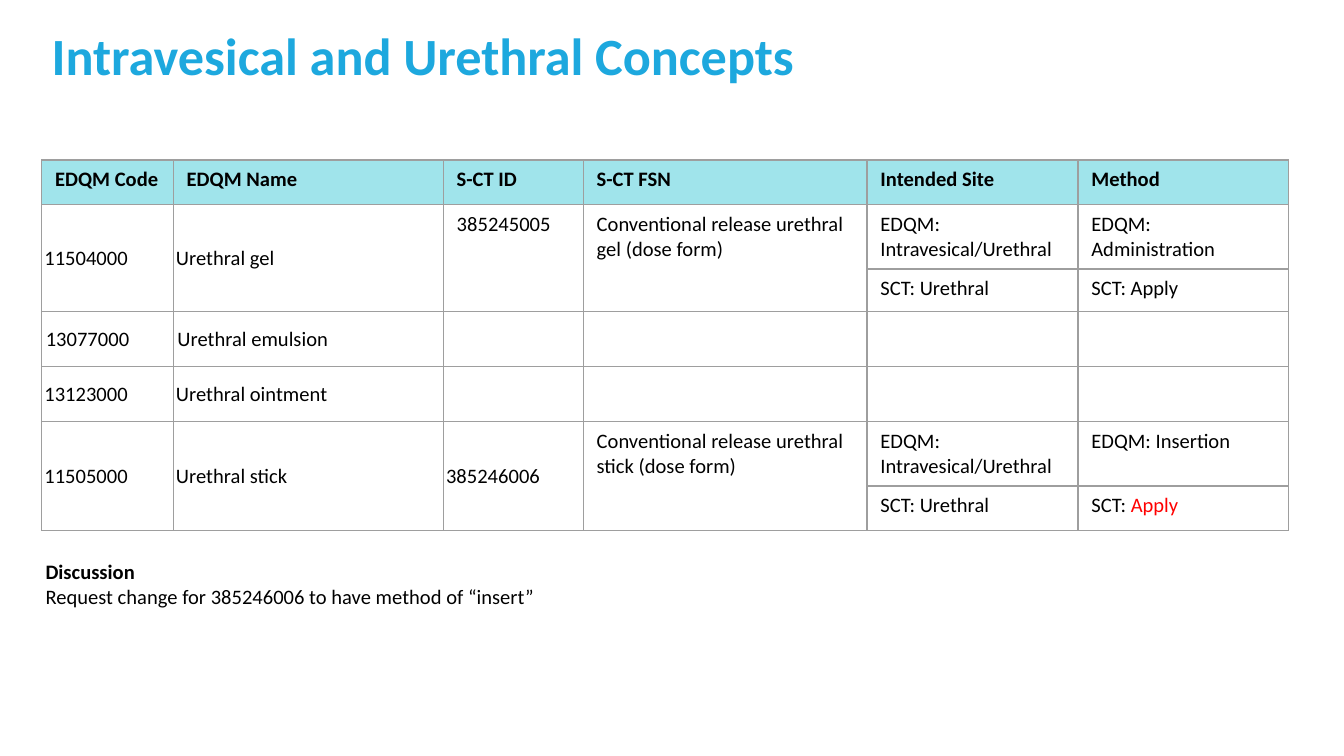
from lxml import etree
from pptx import Presentation
from pptx.dml.color import RGBColor
from pptx.enum.text import MSO_ANCHOR, MSO_AUTO_SIZE, PP_ALIGN
from pptx.oxml.ns import qn
from pptx.util import Pt

MIDDLE = MSO_ANCHOR.MIDDLE
LEFT = PP_ALIGN.LEFT
GROW = MSO_AUTO_SIZE.SHAPE_TO_FIT_TEXT
TITLE_ONLY = 5

BLACK, RED, BLUE = "000000", "FF0000", "1DA8DE"
AQUA, GRAY = "A0E4EB", "9E9E9E"

COLS = [70.5, 144.7, 75, 152, 113, 113]
ROWS = [24, 26, 23, 29.5, 29.5, 24, 24]
HEADS = ["EDQM Code", "EDQM Name", "S-CT ID", "S-CT FSN",
         "Intended Site", "Method"]
BODY = [
    ["11504000", "Urethral gel", "385245005",
     "Conventional release urethral gel (dose form)",
     "EDQM: Intravesical/Urethral", "EDQM: Administration"],
    ["", "", "", "", "SCT: Urethral", "SCT: Apply"],
    ["13077000", "Urethral emulsion", "", "", "", ""],
    ["13123000", "Urethral ointment", "", "", "", ""],
    ["11505000", "Urethral stick", "385246006",
     "Conventional release urethral stick (dose form)",
     "EDQM: Intravesical/Urethral", "EDQM: Insertion"],
    ["", "", "", "", "SCT: Urethral", "SCT: "],
]
PAIRS = [1, 5]  # first row of each product that spans two rows
TIGHT = {(row, col): (1.5, 0.75) for row in (1, 4, 5) for col in (0, 1)}
TIGHT.update({(3, 0): (2.25, 1.5), (3, 1): (2.25, 1.5), (5, 2): (1.5, 0.75)})


def rgb(code):
    return RGBColor.from_string(code)


def add_text(para, text, size=11, color=BLACK, bold=False):
    run = para.add_run()
    run.text = text
    font = run.font
    font.name, font.size, font.bold = "Calibri", Pt(size), bold
    font.color.rgb = rgb(color)


def set_edges(cell):
    """Draw a thin line on all four sides, ahead of the fill in the XML."""
    props = cell._tc.get_or_add_tcPr()
    for i, side in enumerate(("lnL", "lnR", "lnT", "lnB")):
        line = etree.Element(qn("a:" + side), w=str(Pt(0.75)))
        fill = etree.SubElement(line, qn("a:solidFill"))
        etree.SubElement(fill, qn("a:srgbClr"), val=GRAY)
        props.insert(i, line)


def set_inset(cell, side, top):
    cell.vertical_anchor = MIDDLE
    cell.margin_left = cell.margin_right = Pt(side)
    cell.margin_top = cell.margin_bottom = Pt(top)


def add_title(slide, text):
    title = slide.shapes.title
    title.left, title.top = Pt(22.3), Pt(-8)
    title.width, title.height = Pt(620.6), Pt(78.5)
    frame = title.text_frame
    frame.word_wrap = True
    frame.vertical_anchor = MIDDLE
    frame.margin_left = frame.margin_right = Pt(5.4)
    frame.margin_top = frame.margin_bottom = Pt(2.7)
    para = frame.paragraphs[0]
    para.alignment = LEFT
    para.line_spacing = 0.9
    add_text(para, text, size=28, color=BLUE, bold=True)


def add_grid(slide):
    table = slide.shapes.add_table(
        len(ROWS), len(COLS), Pt(22.3), Pt(85.7),
        Pt(sum(COLS)), Pt(sum(ROWS))).table
    table.first_row = table.horz_banding = False
    for col, width in zip(table.columns, COLS):
        col.width = Pt(width)
    for row, height in zip(table.rows, ROWS):
        row.height = Pt(height)
    for r, texts in enumerate([HEADS] + BODY):
        for c, text in enumerate(texts):
            cell = table.cell(r, c)
            if r == 0:
                cell.fill.solid()
                cell.fill.fore_color.rgb = rgb(AQUA)
            else:
                cell.fill.background()
            set_edges(cell)
            if text:
                add_text(cell.text_frame.paragraphs[0], text, bold=r == 0)
            if (r, c) in TIGHT:
                set_inset(cell, *TIGHT[r, c])
    last = table.cell(len(ROWS) - 1, len(COLS) - 1)
    add_text(last.text_frame.paragraphs[0], "Apply", color=RED)
    for r in PAIRS:
        for c in range(4):
            table.cell(r, c).merge(table.cell(r + 1, c))


def add_note(slide, head, text):
    box = slide.shapes.add_textbox(Pt(17.3), Pt(296), Pt(686), Pt(34))
    frame = box.text_frame
    frame.word_wrap = True
    frame.auto_size = GROW
    para = frame.paragraphs[0]
    add_text(para, head, bold=True)
    para.add_line_break()
    add_text(para, text)


def main():
    deck = Presentation()
    deck.slide_width, deck.slide_height = Pt(720), Pt(405)
    slide = deck.slides.add_slide(deck.slide_layouts[TITLE_ONLY])
    add_title(slide, "Intravesical and Urethral Concepts")
    add_grid(slide)
    add_note(slide, "Discussion",
             "Request change for 385246006 to have method of “insert”")
    deck.save("out.pptx")


if __name__ == "__main__":
    main()
